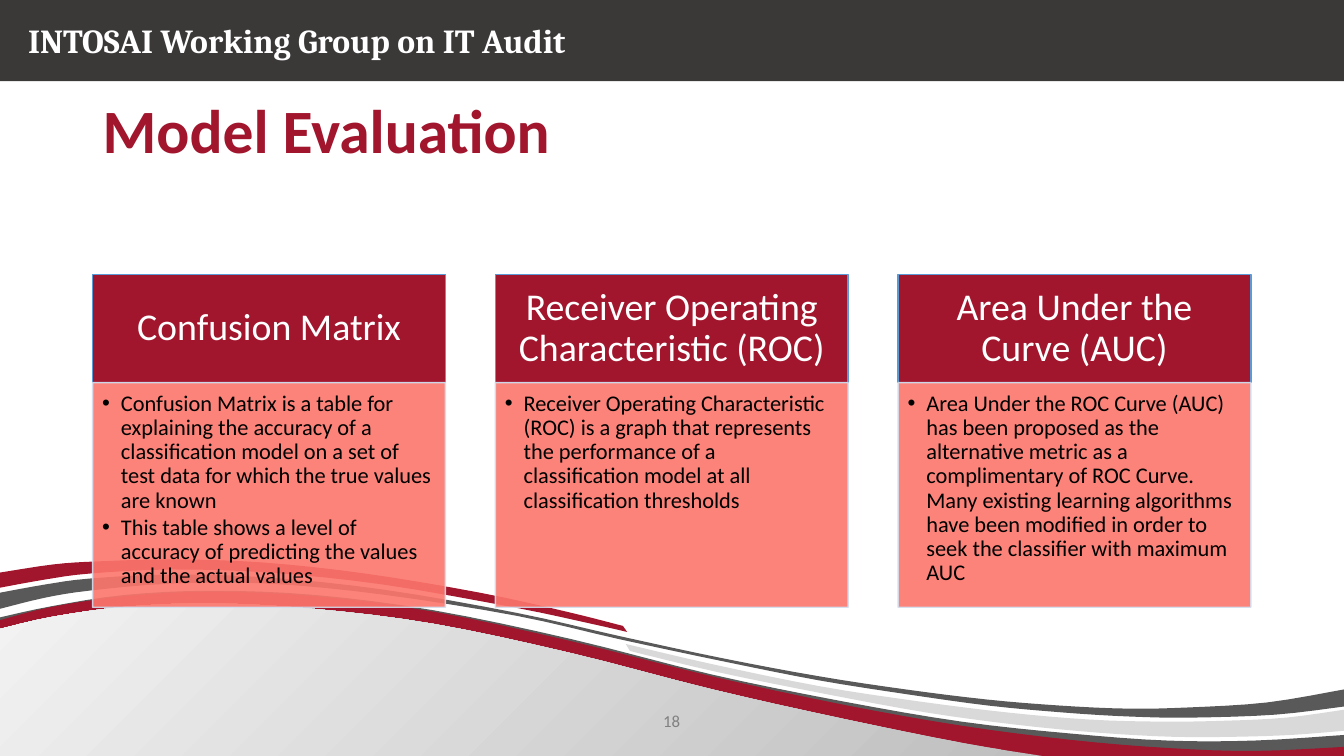
from lxml.etree import SubElement
from pptx import Presentation
from pptx.dml.color import RGBColor
from pptx.enum.shapes import MSO_SHAPE
from pptx.enum.text import MSO_ANCHOR, PP_ALIGN
from pptx.oxml.ns import qn
from pptx.util import Pt

WIDTH, HEIGHT = 960, 540
RED, CHARCOAL, DARK, LIGHT = "A1152D", "3B3838", "595959", "D9D9D9"
CORAL, BLUE, PALE_BLUE = "FC766C", "5B9BD5", "D2DEEF"
WHITE, BLACK, GREY = "FFFFFF", "000000", "808080"

# Wave edges, left to right
DARK_HILL = [(0, 441), (37, 433), (89, 425), (151, 422), (225, 425), (310, 436), (408, 456.5),
             (508, 481.7), (602, 501), (687, 515.5), (765, 524), (834, 529), (896, 529), (960, 525)]
RED_HILL = [(0, 443), (37, 433.5), (89, 426), (151, 422.8), (225, 426), (310, 437), (408, 458),
            (508, 483), (602, 503.3), (687, 518.4), (765, 528.5), (834, 534.3), (896, 536.4),
            (960, 533.5)]
GREY_HILL = [(0, 449.3), (37, 440.7), (89, 433.5), (151, 431), (225, 435), (310, 445.7),
             (408, 466.6), (509, 492.5), (602, 513.4), (687, 530.6), (744.5, 540)]
DARK_TOP = [(0, 423.4), (32, 417.6), (64, 413.3), (122, 410.4), (192, 412.6), (274, 421.2),
            (369, 437.8), (442, 454.3), (516, 470.2), (585, 483.1), (647, 492.5), (705, 499.7),
            (757, 504), (805, 506.2), (848, 505.4), (905, 501.8), (960, 492.5)]
DARK_BOTTOM = [(0, 434.9), (32, 427), (64, 421.9), (122, 416.9), (192, 416.9), (274, 424.8),
               (369, 439.9), (442, 456.5), (516, 472.3), (585, 486), (649, 496.1), (706, 504),
               (760, 509), (808, 511.9), (852, 512.6), (911, 510.5), (960, 504.7)]
RED_TOP = [(0, 409), (38, 403.2), (70, 401), (124.5, 399.6), (188, 401.8), (261, 409.7),
           (343, 423.4), (405, 437), (445, 447.1)]
RED_BOTTOM = [(0, 419.8), (32, 414), (64, 409.7), (122, 406.8), (192, 409), (274, 417.6),
              (369, 434.2), (423, 445.7), (448, 451.4)]
LIGHT_TOP = [(447, 460), (509, 474.5), (586, 490.3), (656, 501), (720, 509), (778, 514),
             (830, 515.5), (877, 514.8), (919, 512.6), (960, 507)]
LIGHT_BOTTOM = [(450, 465), (513, 480.2), (591, 496), (662, 509), (726, 517.7), (785, 523.4),
                (837, 526.3), (883, 526.3), (924, 524.9), (960, 522)]
FLOOR = [(0, HEIGHT), (WIDTH, HEIGHT)]

CARDS = [
    ("Confusion Matrix",
     ["Confusion Matrix is a table for explaining the accuracy of a classification model "
      "on a set of test data for which the true values are known",
      "This table shows a level of accuracy of predicting the values and the actual values"]),
    ("Receiver Operating Characteristic (ROC)",
     ["Receiver Operating Characteristic (ROC) is a graph that represents the performance "
      "of a classification model at all classification thresholds"]),
    ("Area Under the Curve (AUC)",
     ["Area Under the ROC Curve (AUC) has been proposed as the alternative metric as a "
      "complimentary of ROC Curve. Many existing learning algorithms have been modified "
      "in order to seek the classifier with maximum AUC"]),
]


def color(value):
    return RGBColor.from_string(value)


def smooth_curve(knots, steps=4):
    """Points of a Catmull-Rom curve through the knots."""
    points = [knots[0]]
    padded = [knots[0], *knots, knots[-1]]
    for a, b, c, d in zip(padded, padded[1:], padded[2:], padded[3:]):
        for step in range(1, steps + 1):
            t = step / steps
            points.append(tuple(
                (2 * q + (r - p) * t + (2 * p - 5 * q + 4 * r - s) * t ** 2
                 + (3 * q - p - 3 * r + s) * t ** 3) / 2
                for p, q, r, s in zip(a, b, c, d)))
    return points


class SlideBuilder:
    font = "Calibri"

    def __init__(self, slide):
        self.slide = slide

    def wave(self, top, bottom, fill=None):
        lower = bottom if bottom is FLOOR else smooth_curve(bottom)
        outline = [(Pt(x), Pt(y)) for x, y in smooth_curve(top) + lower[::-1]]
        builder = self.slide.shapes.build_freeform(*outline[0], scale=1.0)
        builder.add_line_segments(outline[1:], close=True)
        shape = builder.convert_to_shape()
        shape.shadow.inherit = False
        shape.line.fill.background()
        if fill:
            shape.fill.solid()
            shape.fill.fore_color.rgb = color(fill)
        else:
            shape.fill.gradient()
            shape.fill.gradient_angle = 135
            for stop, shade in zip(shape.fill.gradient_stops, ("BFBFBF", "F2F2F2")):
                stop.color.rgb = color(shade)

    def rectangle(self, left, top, width, height, fill, line=None, opacity=100):
        shape = self.slide.shapes.add_shape(
            MSO_SHAPE.RECTANGLE, Pt(left), Pt(top), Pt(width), Pt(height))
        shape.shadow.inherit = False
        shape.fill.solid()
        shape.fill.fore_color.rgb = color(fill)
        if line:
            shape.line.color.rgb = color(line)
            shape.line.width = Pt(1)
        else:
            shape.line.fill.background()
        if opacity < 100:
            for element in shape.element.spPr.iter(qn("a:srgbClr")):
                SubElement(element, qn("a:alpha"), val=str(opacity * 1000))
        return shape

    def text_box(self, left, top, width, height, text, **style):
        shape = self.slide.shapes.add_textbox(Pt(left), Pt(top), Pt(width), Pt(height))
        self.set_text(shape, [text], **style)

    def set_text(self, shape, lines, size, ink, bold=False, font=None, align=PP_ALIGN.LEFT,
                 anchor=MSO_ANCHOR.MIDDLE, margins=(7.2, 3.6, 7.2, 3.6), spacing=1,
                 bullets=False):
        frame = shape.text_frame
        frame.text = "\n".join(lines)
        frame.word_wrap = True
        frame.vertical_anchor = anchor
        (frame.margin_left, frame.margin_top,
         frame.margin_right, frame.margin_bottom) = map(Pt, margins)
        for paragraph in frame.paragraphs:
            paragraph.alignment = align
            paragraph.line_spacing = spacing
            if bullets:
                paragraph.space_after = Pt(2.4)
                properties = paragraph._p.get_or_add_pPr()
                properties.set("marL", str(Pt(13.5)))
                properties.set("indent", str(Pt(-13.5)))
                SubElement(properties, qn("a:buFont"), typeface="Arial")
                SubElement(properties, qn("a:buChar"), char="•")
            for run in paragraph.runs:
                run.font.name = font or self.font
                run.font.size = Pt(size)
                run.font.bold = bold
                run.font.color.rgb = color(ink)

    def card(self, left, heading, points):
        width = 252
        header = self.rectangle(left, 195.9, width, 77.4, RED, BLUE)
        self.set_text(header, [heading], 27, WHITE, align=PP_ALIGN.CENTER,
                      margins=(15, 8.6, 15, 8.6), spacing=0.9)
        body = self.rectangle(left, 273.3, width, 160.5, CORAL, PALE_BLUE, opacity=90)
        self.set_text(body, points, 16, BLACK, anchor=MSO_ANCHOR.TOP,
                      margins=(6.75, 6.75, 9, 10), spacing=0.9, bullets=True)


def main():
    presentation = Presentation()
    presentation.slide_width, presentation.slide_height = Pt(WIDTH), Pt(HEIGHT)
    builder = SlideBuilder(presentation.slides.add_slide(presentation.slide_layouts[6]))

    # Waves along the bottom
    builder.wave(DARK_HILL, FLOOR, DARK)
    builder.wave(RED_HILL, FLOOR, RED)
    builder.wave(GREY_HILL, [(0, HEIGHT), GREY_HILL[-1]])
    builder.wave(DARK_TOP, DARK_BOTTOM, DARK)
    builder.wave(RED_TOP, RED_BOTTOM, RED)
    builder.wave(LIGHT_TOP, LIGHT_BOTTOM, LIGHT)

    # Header band, title and page number
    builder.rectangle(0, 0, WIDTH, 58, CHARCOAL)
    builder.text_box(13, 10.8, 480, 36, "INTOSAI Working Group on IT Audit", size=24,
                     ink=WHITE, bold=True, font="Cambria", anchor=MSO_ANCHOR.TOP)
    builder.text_box(66.2, 58, 828, 75, "Model Evaluation", size=44, ink=RED, bold=True,
                     spacing=0.9)
    builder.text_box(424, 500.5, 111.6, 28.8, "18", size=12, ink=GREY, align=PP_ALIGN.CENTER)

    # Three cards at an equal pitch
    for index, (heading, points) in enumerate(CARDS):
        builder.card(66.2 + index * 287.65, heading, points)

    presentation.save("out.pptx")


if __name__ == "__main__":
    main()
